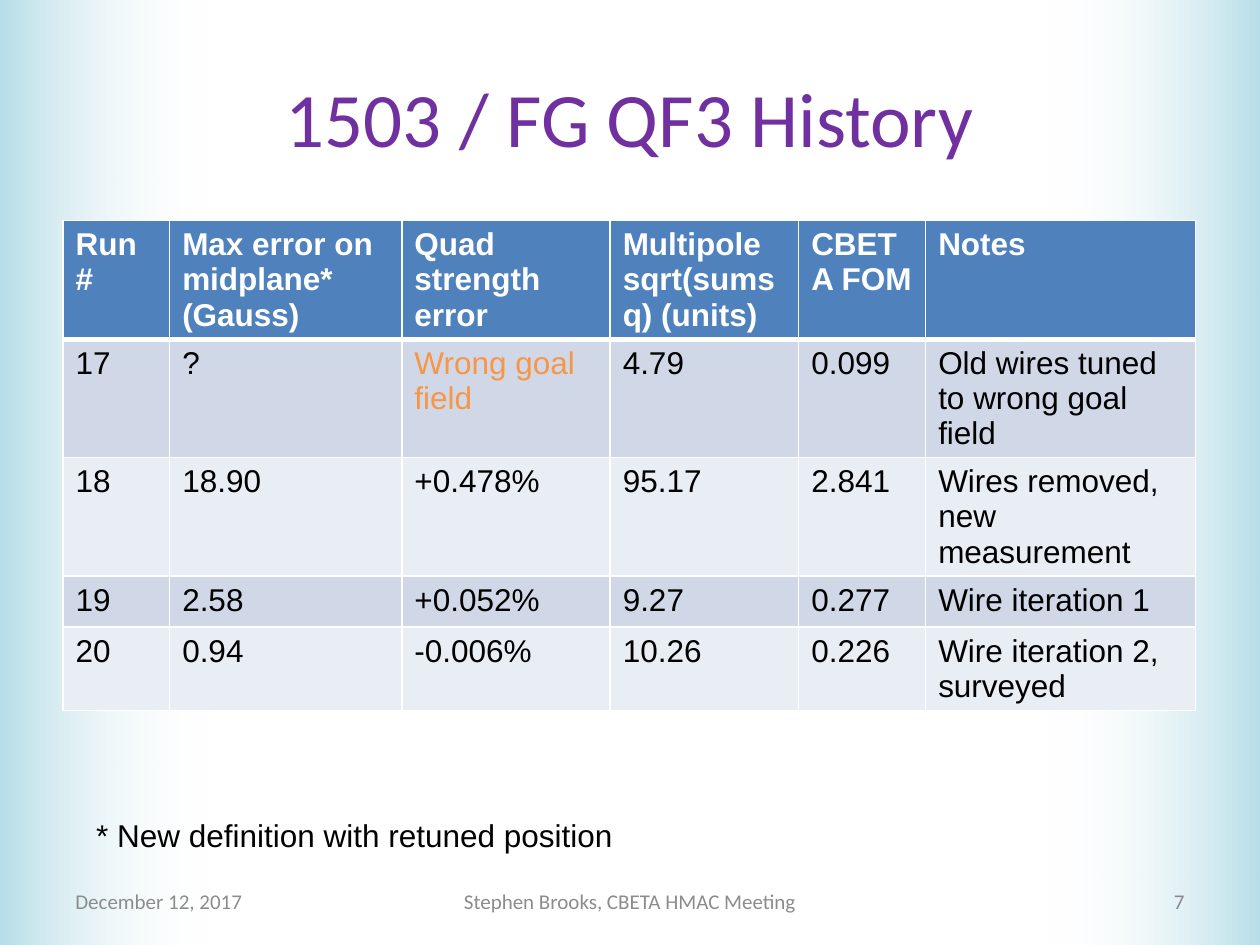
from dataclasses import dataclass

from lxml import etree
from pptx import Presentation
from pptx.dml.color import RGBColor
from pptx.enum.shapes import MSO_SHAPE
from pptx.enum.text import MSO_ANCHOR, MSO_AUTO_SIZE, PP_ALIGN
from pptx.oxml.ns import qn
from pptx.util import Cm, Pt

LEFT, CENTER, RIGHT = PP_ALIGN.LEFT, PP_ALIGN.CENTER, PP_ALIGN.RIGHT
TOP, MIDDLE = MSO_ANCHOR.TOP, MSO_ANCHOR.MIDDLE
RECTANGLE = MSO_SHAPE.RECTANGLE
GROW = MSO_AUTO_SIZE.SHAPE_TO_FIT_TEXT

WIDTH, HEIGHT = 25.4, 19.05
MARGIN = 1.27
BAND_WIDTH = 4.29
FOOTER_TOP, FOOTER_HEIGHT = 17.66, 1.01

WHITE, BLACK, ORANGE = "FFFFFF", "000000", "F79646"
PURPLE, GREY, PALE_BLUE = "7030A0", "8C8C8C", "B7DEE8"
HEADER_FILL = "4F81BD"
ROW_FILLS = ("D0D8E8", "E9EDF4")

COLUMN_WIDTHS = (2.15, 4.68, 4.2, 3.8, 2.56, 5.44)
ROW_HEIGHT = 1.03
WRONG_GOAL = "Wrong goal field"
ROWS = (
    ("Run #", "Max error on midplane* (Gauss)", "Quad strength error",
     "Multipole sqrt(sumsq) (units)", "CBETA FOM", "Notes"),
    ("17", "?", WRONG_GOAL, "4.79", "0.099", "Old wires tuned to wrong goal field"),
    ("18", "18.90", "+0.478%", "95.17", "2.841", "Wires removed, new measurement"),
    ("19", "2.58", "+0.052%", "9.27", "0.277", "Wire iteration 1"),
    ("20", "0.94", "-0.006%", "10.26", "0.226", "Wire iteration 2, surveyed"),
)


@dataclass(frozen=True)
class Label:
    text: str
    left: float
    top: float
    width: float
    height: float
    size: float
    color: str
    font: str = "Calibri"
    align: PP_ALIGN = LEFT
    anchor: MSO_ANCHOR = MIDDLE
    wrap: bool = True


LABELS = (
    Label("1503 / FG QF3 History", MARGIN, 0.76, 22.86, 3.18, 44, PURPLE, align=CENTER),
    Label("December 12, 2017", MARGIN, FOOTER_TOP, 5.93, FOOTER_HEIGHT, 12, GREY),
    Label("Stephen Brooks, CBETA HMAC Meeting", 8.68, FOOTER_TOP, 8.04, FOOTER_HEIGHT,
          12, GREY, align=CENTER),
    Label("7", 18.2, FOOTER_TOP, 5.93, FOOTER_HEIGHT, 12, "898989", align=RIGHT),
    Label("* New definition with retuned position", 1.69, 16.33, 11.02, 1.03, 18, BLACK,
          "Arial", anchor=TOP, wrap=False),
)


def rgb(color: str) -> RGBColor:
    return RGBColor.from_string(color)


def add_run(paragraph, text: str, size: float, color: str, font: str,
            bold: bool = False) -> None:
    run = paragraph.add_run()
    run.text = text
    run.font.size = Pt(size)
    run.font.name = font
    run.font.bold = bold
    run.font.color.rgb = rgb(color)


def add_edge_band(slide, left: float, rotation: float) -> None:
    """Side band that fades from pale blue to clear white."""
    shape = slide.shapes.add_shape(RECTANGLE, Cm(left), Cm(0), Cm(BAND_WIDTH), Cm(HEIGHT))
    shape.rotation = rotation
    shape.shadow.inherit = False
    shape.line.fill.background()
    shape.fill.gradient()
    shape.fill.gradient_angle = 0
    for stop, color in zip(shape.fill.gradient_stops, (PALE_BLUE, WHITE)):
        stop.color.rgb = rgb(color)
    clear_color = shape.element.spPr.findall(".//" + qn("a:srgbClr"))[-1]
    etree.SubElement(clear_color, qn("a:alpha"), val="0")


def add_label(slide, label: Label) -> None:
    shape = slide.shapes.add_textbox(Cm(label.left), Cm(label.top),
                                     Cm(label.width), Cm(label.height))
    frame = shape.text_frame
    frame.word_wrap = label.wrap
    frame.vertical_anchor = label.anchor
    if not label.wrap:
        frame.auto_size = GROW
    paragraph = frame.paragraphs[0]
    paragraph.alignment = label.align
    add_run(paragraph, label.text, label.size, label.color, label.font)


def set_border(cell, side: str, points: float) -> None:
    properties = cell._tc.get_or_add_tcPr()
    line = etree.SubElement(properties, qn(f"a:ln{side}"), w=str(Pt(points)))
    fill = etree.SubElement(line, qn("a:solidFill"))
    etree.SubElement(fill, qn("a:srgbClr"), val=WHITE)


def add_history_table(slide) -> None:
    frame = slide.shapes.add_table(len(ROWS), len(COLUMN_WIDTHS), Cm(MARGIN), Cm(4.45),
                                   Cm(sum(COLUMN_WIDTHS)), Cm(ROW_HEIGHT * len(ROWS)))
    table = frame.table
    for column, width in zip(table.columns, COLUMN_WIDTHS):
        column.width = Cm(width)
    for row_index, row in enumerate(ROWS):
        is_header = row_index == 0
        fill = HEADER_FILL if is_header else ROW_FILLS[(row_index - 1) % 2]
        for column_index, text in enumerate(row):
            cell = table.cell(row_index, column_index)
            # Borders come before the fill in the cell properties
            for side in "LRTB":
                under_header = (row_index, side) in ((0, "B"), (1, "T"))
                set_border(cell, side, 3 if under_header else 1)
            cell.fill.solid()
            cell.fill.fore_color.rgb = rgb(fill)
            color = WHITE if is_header else ORANGE if text == WRONG_GOAL else BLACK
            add_run(cell.text_frame.paragraphs[0], text, 18, color, "Arial", is_header)


def main() -> None:
    presentation = Presentation()
    presentation.slide_width, presentation.slide_height = Cm(WIDTH), Cm(HEIGHT)
    slide = presentation.slides.add_slide(presentation.slide_layouts[6])

    # Background
    slide.background.fill.solid()
    slide.background.fill.fore_color.rgb = rgb(WHITE)
    add_edge_band(slide, WIDTH - BAND_WIDTH, 180)
    add_edge_band(slide, 0, 0)

    # Table, title, footer and footnote
    add_history_table(slide)
    for label in LABELS:
        add_label(slide, label)

    presentation.save("out.pptx")


if __name__ == "__main__":
    main()
